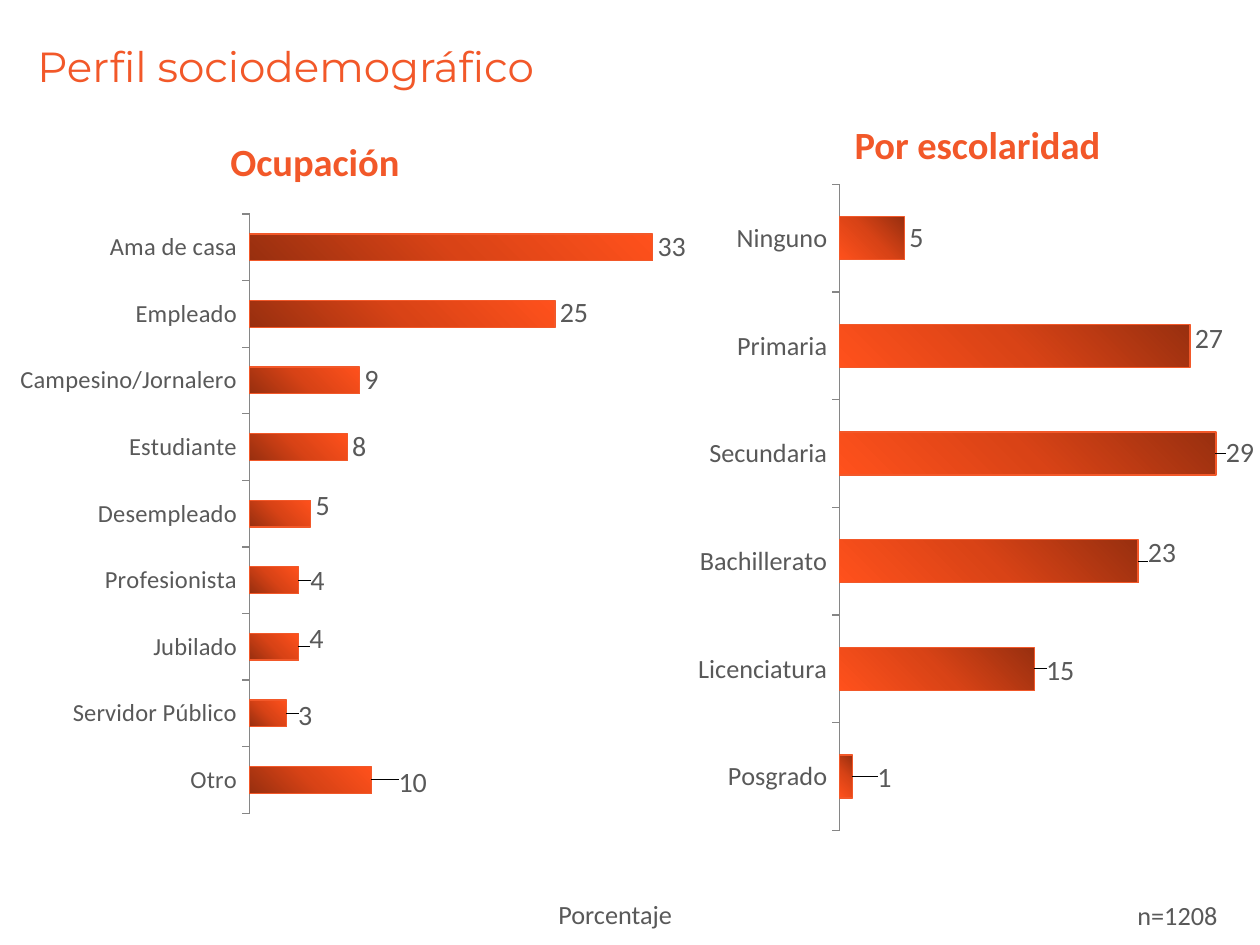
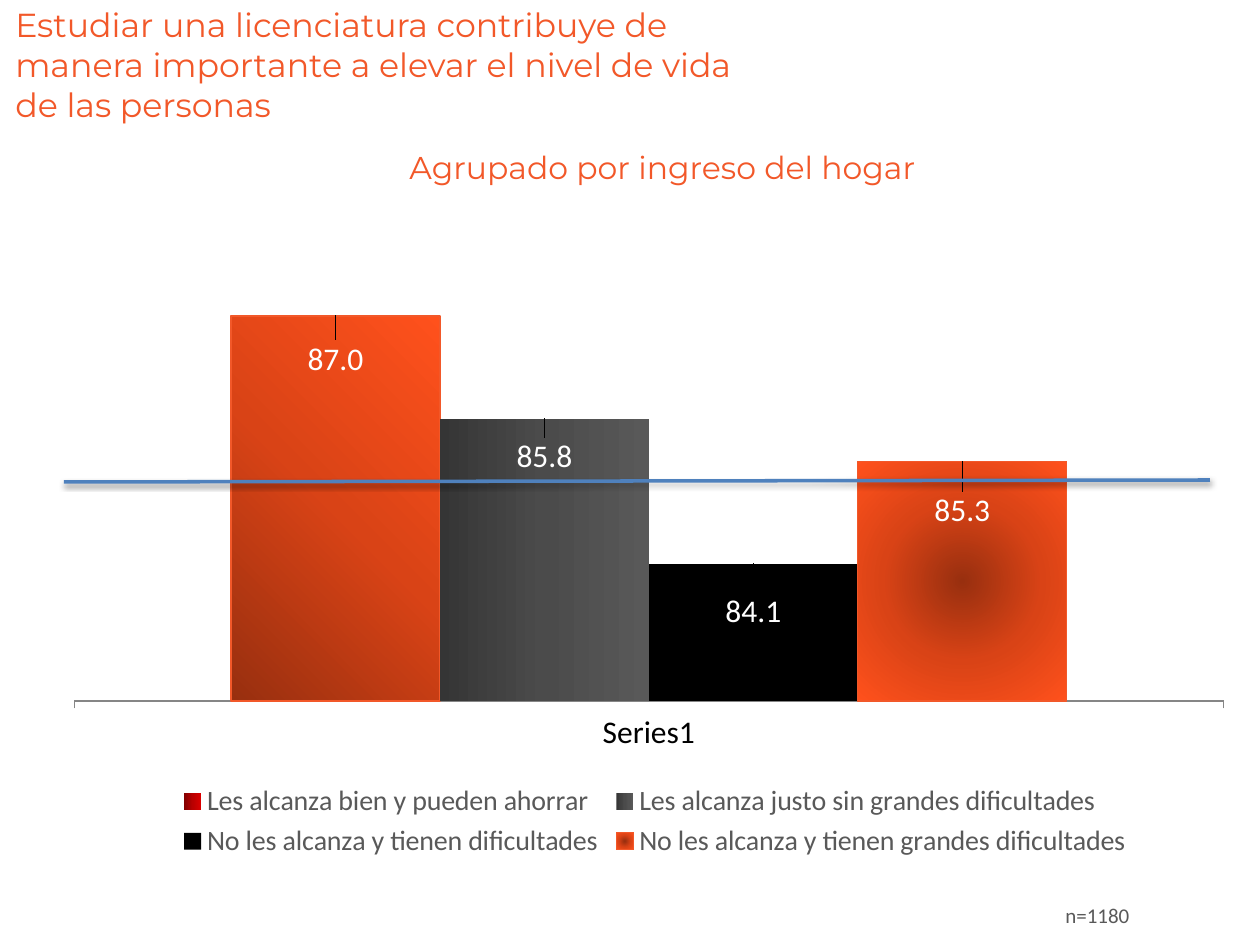
from pptx import Presentation
from pptx.chart.data import CategoryChartData
from pptx.dml.color import RGBColor
from pptx.enum.chart import XL_CHART_TYPE, XL_LABEL_POSITION, XL_LEGEND_POSITION, XL_TICK_MARK
from pptx.enum.shapes import MSO_CONNECTOR
from pptx.enum.text import MSO_ANCHOR, PP_ALIGN
from pptx.oxml import parse_xml
from pptx.oxml.ns import nsdecls
from pptx.util import Emu, Pt

BAR = XL_CHART_TYPE.BAR_CLUSTERED
COLUMN = XL_CHART_TYPE.COLUMN_CLUSTERED
OUTSIDE_END = XL_LABEL_POSITION.OUTSIDE_END
LEGEND_BOTTOM = XL_LEGEND_POSITION.BOTTOM
TICK_OUT = XL_TICK_MARK.OUTSIDE
TICK_NONE = XL_TICK_MARK.NONE
STRAIGHT = MSO_CONNECTOR.STRAIGHT
TOP, MIDDLE = MSO_ANCHOR.TOP, MSO_ANCHOR.MIDDLE
LEFT, CENTER = PP_ALIGN.LEFT, PP_ALIGN.CENTER

SCALE = 914400 / 126
ORANGE, GRAY, BLUE = "F25829", "595959", "4F81BD"
BLACK, WHITE, AXIS_GRAY = "000000", "FFFFFF", "868686"
BODY_FONT, TITLE_FONT = "Calibri", "Montserrat"

ORANGE_STOPS = ("982F0F", "D94316", "FF511C")
RED_STOPS = ("820000", "B90000", "DB0000")
GRAY_STOPS = ("353535", "4B4B4B", "595959")
FROM_LEFT = '<a:lin ang="0" scaled="0"/>'
FROM_TOP_RIGHT = '<a:lin ang="8100000" scaled="0"/>'
FROM_BOTTOM_LEFT = '<a:path path="circle"><a:fillToRect t="100000" r="100000"/></a:path>'
FROM_CENTER = ('<a:path path="circle"><a:fillToRect l="50000" t="50000" '
               'r="50000" b="50000"/></a:path>')

SCHOOLING = {
    "box": (663, 178, 631, 653),
    "plot": (0.28, 0.01, 0.72, 0.99),
    "rows": [
        ("Posgrado", 1, (20, 2)),
        ("Licenciatura", 15, (7, 2)),
        ("Bachillerato", 23, (5, -8)),
        ("Secundaria", 29, (5, 0)),
        ("Primaria", 27, (0, -7)),
        ("Ninguno", 5, (0, 0)),
    ],
    "shade": FROM_TOP_RIGHT,
    "axis_size": 15,
}
OCCUPATION = {
    "box": (0, 207, 713, 697),
    "plot": (0.35, 0.01, 0.6, 0.86),
    "rows": [
        ("Otro", 10, (22, 3)),
        ("Servidor Público", 3, (7, 3)),
        ("Jubilado", 4, (6, -8)),
        ("Profesionista", 4, (7, 1)),
        ("Desempleado", 5, (0, -7)),
        ("Estudiante", 8, (0, 0)),
        ("Campesino/Jornalero", 9, (0, 0)),
        ("Empleado", 25, (0, 0)),
        ("Ama de casa", 33, (0, 0)),
    ],
    "shade": FROM_BOTTOM_LEFT,
    "axis_size": 14,
}
INCOME_BOX = (50, 185, 1210, 679)
INCOME_PLOT = (0.02, 0.13, 0.95, 0.63)
INCOME = [
    ("Les alcanza bien y pueden ahorrar", 87, 67, RED_STOPS, FROM_LEFT),
    ("Les alcanza justo sin grandes dificultades", 85.8, 62, GRAY_STOPS, FROM_LEFT),
    ("No les alcanza y tienen dificultades", 84.1, 71, None, None),
    ("No les alcanza y tienen grandes dificultades", 85.3, 73, ORANGE_STOPS, FROM_CENTER),
]


def px(value):
    return Emu(round(value * SCALE))


def color(value):
    return RGBColor.from_string(value)


def style(font, size, tint, name=BODY_FONT, bold=False):
    font.size = Pt(size)
    font.name = name
    font.bold = bold
    font.color.rgb = color(tint)


def add_text(page, place, text, size, tint=GRAY, name=BODY_FONT, bold=False,
             align=LEFT, anchor=TOP, wrap=True, insets=None):
    box = page.shapes.add_textbox(*map(px, place))
    frame = box.text_frame
    frame.word_wrap = wrap
    frame.vertical_anchor = anchor
    if insets:
        frame.margin_top, frame.margin_bottom = map(px, insets)
    para = frame.paragraphs[0]
    para.alignment = align
    span = para.add_run()
    span.text = text
    style(span.font, size, tint, name, bold)


def add_title(page, place, text, size, insets=None):
    add_text(page, place, text, size, ORANGE, TITLE_FONT, anchor=MIDDLE, insets=insets)


def add_chart_heading(page, place, text):
    add_text(page, place, text, 22, ORANGE, bold=True, align=CENTER, wrap=False)


def manual_layout(values, inner=False):
    modes = ""
    if inner:
        modes = '<c:layoutTarget val="inner"/><c:xMode val="edge"/><c:yMode val="edge"/>'
    parts = "".join(f'<c:{key} val="{value:.4f}"/>' for key, value in zip("xywh", values))
    return parse_xml(f'<c:layout {nsdecls("c")}><c:manualLayout>{modes}{parts}'
                     '</c:manualLayout></c:layout>')


def paint_gradient(series, target, stops, shade):
    solid = series._element.xpath(f"./{target}c:spPr/a:solidFill")[0]
    marks = "".join(f'<a:gs pos="{spot * 50000}"><a:srgbClr val="{tint}"/></a:gs>'
                    for spot, tint in enumerate(stops))
    gradient = parse_xml(f'<a:gradFill {nsdecls("a")} rotWithShape="1">'
                         f'<a:gsLst>{marks}</a:gsLst>{shade}</a:gradFill>')
    solid.getparent().replace(solid, gradient)


def outline(item):
    item.format.line.color.rgb = color(ORANGE)
    item.format.line.width = Pt(0.75)


def fill_solid(item, tint):
    item.format.fill.solid()
    item.format.fill.fore_color.rgb = color(tint)


def label_points(series, shifts, box, size, tint):
    labels = series.data_labels
    labels.show_value = True
    labels.position = OUTSIDE_END
    style(labels.font, size, tint)
    for index, (right, down) in enumerate(shifts):
        label = series.points[index].data_label
        style(label.font, size, tint)
        label.position = OUTSIDE_END
        element = series._element.xpath(f"./c:dLbls/c:dLbl[c:idx/@val='{index}']")[0]
        element.insert(1, manual_layout((right / box[2], down / box[3])))


def add_base_chart(page, kind, box, plot, data, limits, axis_size, axis_tint):
    chart = page.shapes.add_chart(kind, *map(px, box), data).chart
    chart.has_title = False
    chart.has_legend = False
    style(chart.font, 18, BLACK)
    area = chart._chartSpace.xpath("./c:chart/c:plotArea")[0]
    for layout in area.xpath("./c:layout"):
        area.remove(layout)
    area.insert(0, manual_layout(plot, inner=True))
    values = chart.value_axis
    values.minimum_scale, values.maximum_scale = limits
    values.has_major_gridlines = False
    values.visible = False
    names = chart.category_axis
    names.has_major_gridlines = False
    names.major_tick_mark = TICK_OUT
    names.minor_tick_mark = TICK_NONE
    names.format.line.color.rgb = color(AXIS_GRAY)
    names.format.line.width = Pt(0.75)
    style(names.tick_labels.font, axis_size, axis_tint)
    chart.plots[0].gap_width = 150
    chart.plots[0].overlap = 0
    chart.plots[0].vary_by_categories = False
    return chart


def add_profile_chart(page, profile):
    names, values, shifts = zip(*profile["rows"])
    data = CategoryChartData(number_format="0")
    data.categories = names
    data.add_series("Series 1", values)
    chart = add_base_chart(page, BAR, profile["box"], profile["plot"], data, (0, 35),
                           profile["axis_size"], GRAY)
    series = chart.plots[0].series[0]
    series.invert_if_negative = False
    fill_solid(series, ORANGE)
    outline(series)
    paint_gradient(series, "", ORANGE_STOPS, profile["shade"])
    label_points(series, shifts, profile["box"], 16, GRAY)


def add_income_chart(page):
    data = CategoryChartData(number_format="0.0")
    data.categories = ["Series1"]
    for name, value, *rest in INCOME:
        data.add_series(name, [value])
    chart = add_base_chart(page, COLUMN, INCOME_BOX, INCOME_PLOT, data, (82.5, 87.5), 18, BLACK)
    chart.value_axis.major_unit = 0.5
    chart.has_legend = True
    chart.legend.position = LEGEND_BOTTOM
    chart.legend.include_in_layout = False
    style(chart.legend.font, 16, GRAY)
    for series, (name, value, down, stops, shade) in zip(chart.plots[0].series, INCOME):
        series.invert_if_negative = False
        fill_solid(series, BLACK)
        if stops:
            paint_gradient(series, "", stops, shade)
        if stops == ORANGE_STOPS:
            outline(series)
        label_points(series, [(0, down)], INCOME_BOX, 18, WHITE)
    first = chart.plots[0].series[0]
    point = first.points[0]
    fill_solid(point, ORANGE)
    outline(point)
    paint_gradient(first, "c:dPt/", ORANGE_STOPS, FROM_BOTTOM_LEFT)


def add_average_line(page):
    line = page.shapes.add_connector(STRAIGHT, *map(px, (64, 482, 1210, 480)))
    line.line.color.rgb = color(BLUE)
    line.line.width = Pt(2)
    line._element.spPr.append(parse_xml(
        f'<a:effectLst {nsdecls("a")}><a:outerShdw blurRad="40000" dist="20000" dir="5400000" '
        'rotWithShape="0"><a:srgbClr val="000000"><a:alpha val="38000"/></a:srgbClr>'
        '</a:outerShdw></a:effectLst>'))


def build_profile(page):
    add_title(page, (25, 13, 675, 105), "Perfil sociodemográfico", 24)
    add_profile_chart(page, SCHOOLING)
    add_chart_heading(page, (840, 115, 275, 59), "Por escolaridad")
    add_profile_chart(page, OCCUPATION)
    add_chart_heading(page, (217, 132, 196, 59), "Ocupación")
    add_text(page, (1125, 893, 135, 44), "n=1208", 15)
    add_text(page, (546, 892, 166, 44), "Porcentaje", 15)


def build_income(page):
    add_title(page, (3, 6, 742, 154), "Estudiar una licenciatura contribuye de manera importante "
              "a elevar el nivel de vida de las personas", 19, insets=(0, 38))
    add_income_chart(page)
    add_text(page, (1053, 896, 155, 38), "n=1180", 12)
    add_title(page, (397, 152, 658, 63), "Agrupado por ingreso del hogar", 18, insets=(0, 33))
    add_average_line(page)


def main():
    deck = Presentation()
    deck.slide_width, deck.slide_height = px(1260), px(945)
    for build in (build_profile, build_income):
        build(deck.slides.add_slide(deck.slide_layouts[6]))
    deck.save("out.pptx")


if __name__ == "__main__":
    main()
